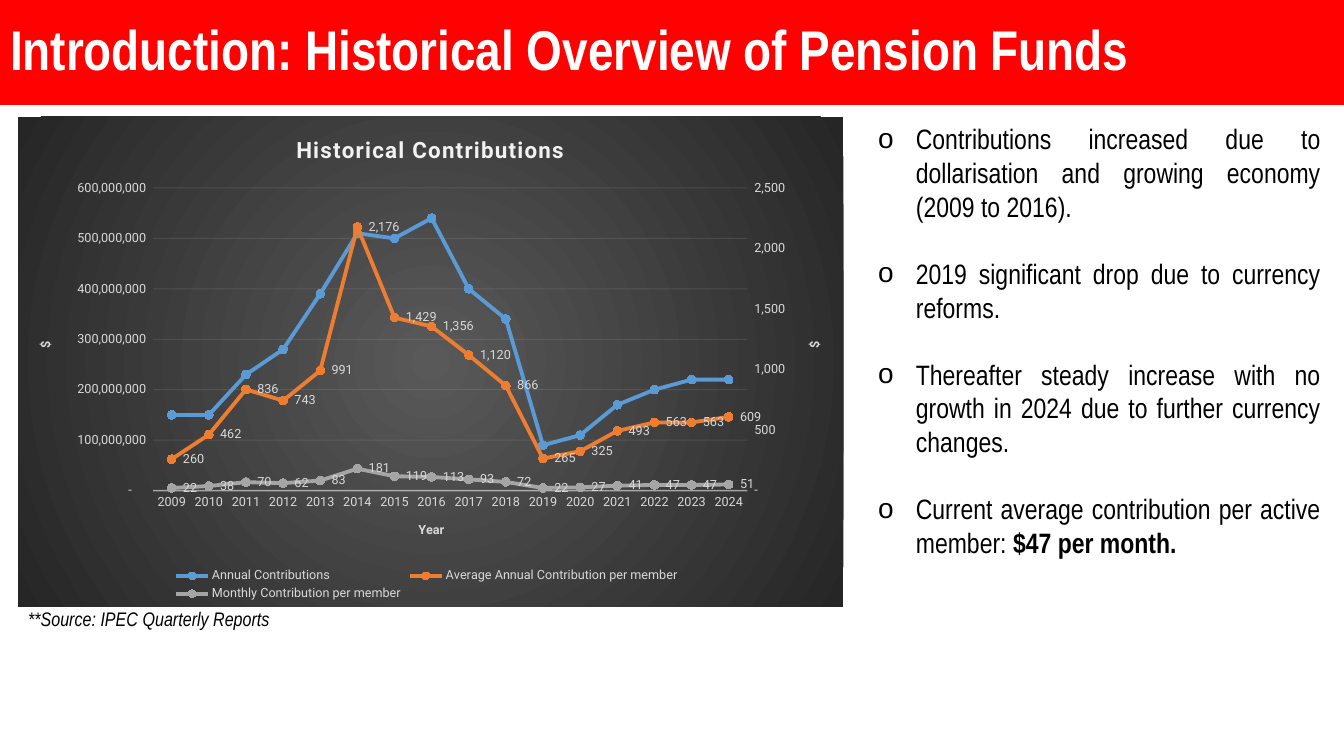
from copy import deepcopy

from lxml.etree import SubElement
from pptx import Presentation
from pptx.chart.data import CategoryChartData
from pptx.dml.color import RGBColor
from pptx.enum.chart import XL_CHART_TYPE, XL_LABEL_POSITION, XL_LEGEND_POSITION, XL_MARKER_STYLE, XL_TICK_MARK
from pptx.enum.text import MSO_ANCHOR, MSO_AUTO_SIZE, PP_ALIGN
from pptx.oxml import parse_xml
from pptx.oxml.ns import nsdecls, qn
from pptx.util import Pt

COLORS = {
    "banner": "FF0101", "white": "FFFFFF", "black": "000000",
    "label": "D9D9D9", "pale": "F2F2F2", "glow": "595959", "edge": "262626",
    "annual": "5B9BD5", "average": "ED7D31", "monthly": "A5A5A5",
}
TEXT_FONT = "Arial Narrow"
CHART_FONT = "Roboto"
NUMBER_FORMAT = '_-* #,##0_-;\\-* #,##0_-;_-* "-"??_-;_-@_-'


def style_font(font, name, size, color, bold=False):
    font.name, font.size, font.bold = name, Pt(size), bold
    font.color.rgb = RGBColor.from_string(COLORS[color])


def place_part(part, **percents):
    """Position a chart part by percentages (x, y, w, h) of the chart area."""
    layout = part.find(qn("c:layout"))
    if layout is None:
        layout = parse_xml(f"<c:layout {nsdecls('c')}/>")
        part.insert(0, layout)
    manual = SubElement(layout, qn("c:manualLayout"))
    if part.tag == qn("c:plotArea"):
        SubElement(manual, qn("c:layoutTarget")).set("val", "inner")
    for key in ("x", "y"):
        SubElement(manual, qn(f"c:{key}Mode")).set("val", "edge")
    for key, value in percents.items():
        SubElement(manual, qn(f"c:{key}")).set("val", f"{value / 100:.4f}")


deck = Presentation()
deck.slide_width, deck.slide_height = Pt(960), Pt(540)
page = deck.slides.add_slide(deck.slide_layouts[1])

# Title banner
title = page.shapes.title
title.left, title.top, title.width, title.height = Pt(0), Pt(-0.7), Pt(960), Pt(75.6)
title.fill.solid()
title.fill.fore_color.rgb = RGBColor.from_string(COLORS["banner"])
title.text_frame.auto_size = MSO_AUTO_SIZE.NONE
title.text_frame.vertical_anchor = MSO_ANCHOR.MIDDLE
para = title.text_frame.paragraphs[0]
para.alignment, para.line_spacing = PP_ALIGN.LEFT, 0.9
span = para.add_run()
span.text = "Introduction: Historical Overview of Pension Funds"
style_font(span.font, TEXT_FONT, 40, "white", True)

# Bulleted findings
findings = [
    [("Contributions increased due to dollarisation and growing economy (2009 to 2016).", False)],
    [("2019 significant drop due to currency reforms.", False)],
    [("Thereafter steady increase with no growth in 2024 due to further currency changes.", False)],
    [("Current average contribution per active member: ", False), ("$47 per month.", True)],
]
body = page.placeholders[1]
body.left, body.top, body.width, body.height = Pt(620), Pt(83.5), Pt(330.5), Pt(322.5)
body.text_frame.auto_size = MSO_AUTO_SIZE.NONE
for index, finding in enumerate(findings):
    para = body.text_frame.add_paragraph() if index else body.text_frame.paragraphs[0]
    para.alignment, para.line_spacing = PP_ALIGN.JUSTIFY, 1.0
    para.space_before = Pt(24 if index else 0)
    properties = para._p.get_or_add_pPr()
    properties.set("marL", str(Pt(27)))
    properties.set("indent", str(Pt(-27)))
    SubElement(properties, qn("a:buChar")).set("char", "o")
    for text, bold in finding:
        span = para.add_run()
        span.text = text
        style_font(span.font, TEXT_FONT, 20, "black", bold)

# Contributions chart
data = CategoryChartData(number_format="#,##0")
data.categories = [str(year) for year in range(2009, 2025)]
millions = [150, 150, 230, 280, 390, 510, 500, 540, 400, 340, 90, 110, 170, 200, 220, 220]
data.add_series("Annual Contributions ", [value * 1_000_000 for value in millions])
data.add_series("Average Annual Contribution per member",
                [260, 462, 836, 743, 991, 2176, 1429, 1356, 1120, 866, 265, 325, 493, 563, 563, 609])
data.add_series("Monthly Contribution per member",
                [22, 38, 70, 62, 83, 181, 119, 113, 93, 72, 22, 27, 41, 47, 47, 51])
chart = page.shapes.add_chart(XL_CHART_TYPE.LINE_MARKERS, Pt(13), Pt(83.5), Pt(589.5), Pt(350), data).chart
style_font(chart.font, CHART_FONT, 10, "label")
chart.plots[0].vary_by_categories = False

for series, color in zip(chart.plots[0].series, ("annual", "average", "monthly")):
    rgb = RGBColor.from_string(COLORS[color])
    series.smooth = False
    series.format.line.width = Pt(2.75)
    series.format.line.color.rgb = rgb
    series.marker.style, series.marker.size = XL_MARKER_STYLE.CIRCLE, 6
    series.marker.format.fill.solid()
    series.marker.format.fill.fore_color.rgb = rgb
    series.marker.format.line.color.rgb = rgb
    if color != "annual":
        labels = series.data_labels
        labels.show_value = True
        labels.position = XL_LABEL_POSITION.RIGHT
        labels.number_format, labels.number_format_is_linked = NUMBER_FORMAT, False
        style_font(labels.font, CHART_FONT, 9, "label")

year_axis, money_axis = chart.category_axis, chart.value_axis
headings = [(chart, "Historical Contributions", 16, "pale"), (year_axis, "Year", 9, "label"),
            (money_axis, "$", 9, "label")]
for owner, text, size, color in headings:
    owner.has_title = True
    heading = owner.chart_title if owner is chart else owner.axis_title
    span = heading.text_frame.paragraphs[0].add_run()
    span.text = text
    style_font(span.font, CHART_FONT, size, color, True)
    if owner is chart:
        span.font._element.set("spc", "100")
        chart.chart_title.include_in_layout = False
money_axis.axis_title.text_frame._txBody.bodyPr.set("rot", "-5400000")

for axis in (year_axis, money_axis):
    axis.major_tick_mark = axis.minor_tick_mark = XL_TICK_MARK.NONE
    style_font(axis.tick_labels.font, CHART_FONT, 9, "label")
money_axis.tick_labels.number_format = NUMBER_FORMAT
money_axis.tick_labels.number_format_is_linked = False
money_axis.format.line.fill.background()
year_line, grid_line = year_axis.format.line, money_axis.major_gridlines.format.line
for line, width, opacity in ((year_line, 1, 54), (grid_line, 0.75, 10)):
    line.width = Pt(width)
    line.color.rgb = RGBColor.from_string(COLORS["pale"])
    shade = line.fill._xPr.find(".//" + qn("a:srgbClr"))
    SubElement(shade, qn("a:alpha")).set("val", str(opacity * 1000))

chart.has_legend = True
chart.legend.position = XL_LEGEND_POSITION.BOTTOM
chart.legend.include_in_layout = False
style_font(chart.legend.font, CHART_FONT, 9, "label")

# Right-hand axis for the two per-member series
plot_area = chart._chartSpace.chart.plotArea
left_lines = plot_area.find(qn("c:lineChart"))
right_lines = deepcopy(left_lines)
left_lines.addnext(right_lines)
for lines, kept in ((left_lines, (0,)), (right_lines, (1, 2))):
    for index, series in enumerate(lines.findall(qn("c:ser"))):
        if index not in kept:
            lines.remove(series)

right_years, right_money = deepcopy(year_axis._element), deepcopy(money_axis._element)
money_axis._element.addnext(right_money)
right_money.addnext(right_years)
year_id, money_id = "50010", "50020"
for reference, identifier in zip(right_lines.findall(qn("c:axId")), (year_id, money_id)):
    reference.set("val", identifier)
for axis, own, crossed in ((right_years, year_id, money_id), (right_money, money_id, year_id)):
    axis.find(qn("c:axId")).set("val", own)
    axis.find(qn("c:crossAx")).set("val", crossed)
right_years.find(qn("c:delete")).set("val", "1")
right_years.remove(right_years.find(qn("c:title")))
right_money.remove(right_money.find(qn("c:majorGridlines")))
right_money.find(qn("c:axPos")).set("val", "r")
right_money.find(qn("c:crosses")).set("val", "max")

place_part(plot_area, x=16.35, y=14.5, w=72, h=61.8)
place_part(chart.legend._element, x=18.5, y=91.5, w=62, h=8)
place_part(chart.chart_title._element, x=33.2, y=3)
place_part(year_axis.axis_title._element, x=48.2, y=82)
place_part(money_axis.axis_title._element, x=2, y=45.4)
place_part(right_money.find(qn("c:title")), x=95.2, y=45.4)

chart._chartSpace.chart.addnext(parse_xml(
    f'<c:spPr {nsdecls("c", "a")}><a:gradFill><a:gsLst>'
    f'<a:gs pos="0"><a:srgbClr val="{COLORS["glow"]}"/></a:gs>'
    f'<a:gs pos="100000"><a:srgbClr val="{COLORS["edge"]}"/></a:gs></a:gsLst>'
    '<a:path path="circle"><a:fillToRect l="50000" t="50000" r="50000" b="50000"/></a:path>'
    '</a:gradFill><a:ln><a:noFill/></a:ln></c:spPr>'))

# Source note
note = page.shapes.add_textbox(Pt(13), Pt(430), Pt(232), Pt(24.5))
note.text_frame.word_wrap = True
span = note.text_frame.paragraphs[0].add_run()
span.text = "**Source: IPEC Quarterly Reports"
style_font(span.font, TEXT_FONT, 14, "black")
span.font.italic = True

deck.save("out.pptx")
